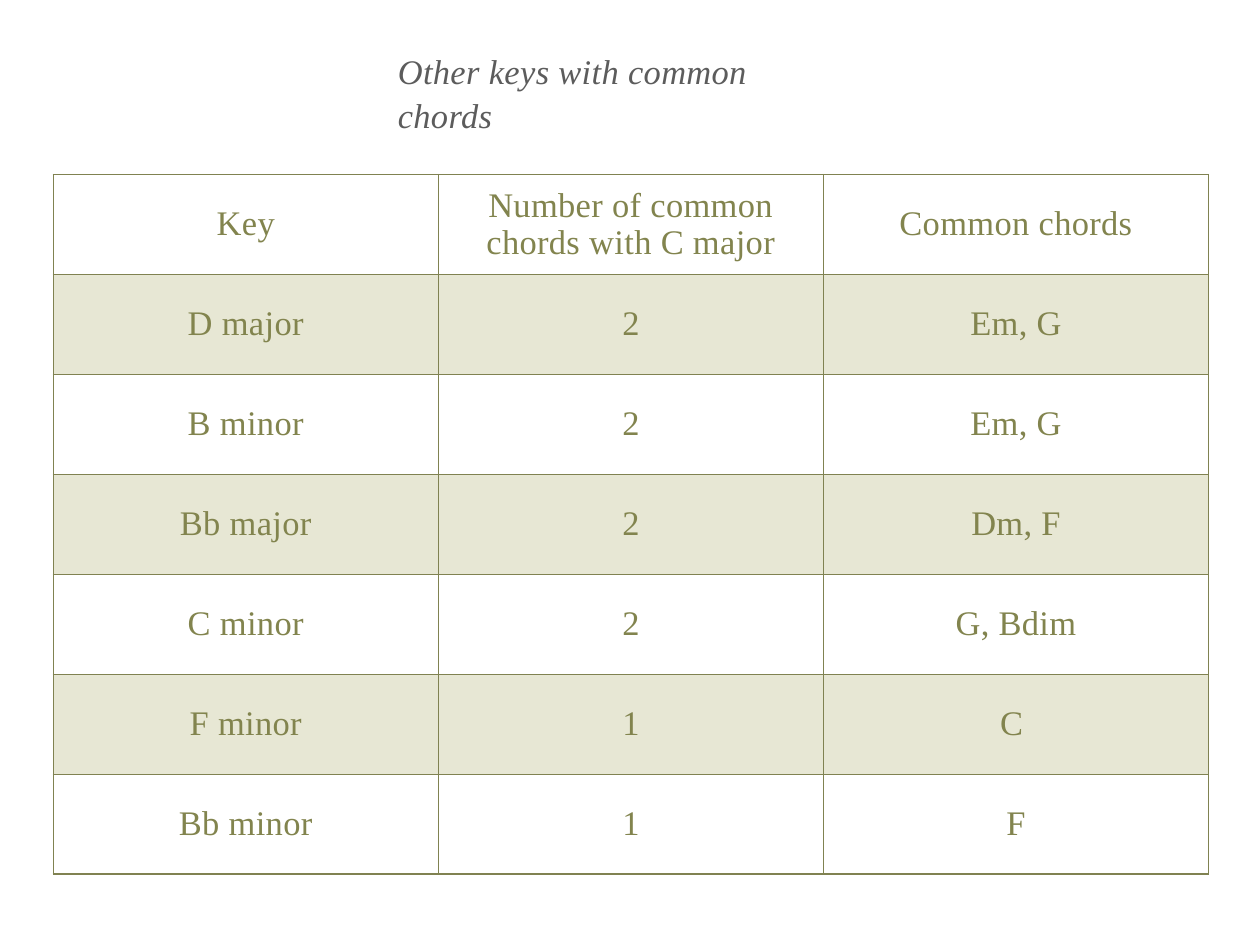
from lxml import etree
from pptx import Presentation, util as u
from pptx.dml.color import RGBColor
from pptx.enum import text
from pptx.oxml.ns import qn

FONT = "Times New Roman"
TITLE_GREY = RGBColor(0x5C, 0x5C, 0x5C)
OLIVE_TEXT = RGBColor(0x82, 0x84, 0x4E)
OLIVE_LINE = RGBColor(0x80, 0x82, 0x51)
OLIVE_BAND = RGBColor(0xA8, 0xA8, 0x61)
BAND_OPACITY = 27
INSET = u.Inches(0.06)

TITLE_BOX = (4.43, 0.71, 5.07, 0.64)
TABLE_BOX = (0.6, 1.97, 13.04, 7.9)
CHORD_ROWS = [
    ("Key", "Number of common chords with C major", "Common chords"),
    ("D major", "2", "Em, G"),
    ("B minor", "2", "Em, G"),
    ("Bb major", "2", "Dm, F"),
    ("C minor", "2", "G, Bdim"),
    ("F minor", "1", "C "),
    ("Bb minor", "1", "F"),
]


def format_paragraph(paragraph, color, alignment, line_spacing, italic=False):
    paragraph.alignment = alignment
    paragraph.line_spacing = line_spacing
    for run in paragraph.runs:
        run.font.name = FONT
        run.font.size = u.Pt(28)
        run.font.bold = False
        run.font.italic = italic
        run.font.color.rgb = color
        run.font._element.set("spc", "30")


def set_insets(holder):
    holder.margin_left = holder.margin_right = INSET
    holder.margin_top = holder.margin_bottom = INSET
    holder.vertical_anchor = text.MSO_ANCHOR.MIDDLE


def set_borders(cell):
    properties = cell._tc.get_or_add_tcPr()
    for index, side in enumerate(("lnL", "lnR", "lnT", "lnB")):
        line = etree.Element(qn(f"a:{side}"), w=str(u.Pt(1)))
        fill = etree.SubElement(line, qn("a:solidFill"))
        etree.SubElement(fill, qn("a:srgbClr"), val=str(OLIVE_LINE))
        properties.insert(index, line)  # borders come before the fill


def fill_band(cell):
    cell.fill.solid()
    cell.fill.fore_color.rgb = OLIVE_BAND
    color = cell._tc.tcPr.find(".//" + qn("a:srgbClr"))
    etree.SubElement(color, qn("a:alpha"), val=str(BAND_OPACITY * 1000))


def add_title(slide, box):
    title = slide.shapes.title
    title.left, title.top, title.width, title.height = map(u.Inches, box)
    frame = title.text_frame
    frame.text = "Other keys with common chords"
    frame.word_wrap = True
    frame.auto_size = text.MSO_AUTO_SIZE.NONE
    set_insets(frame)
    format_paragraph(frame.paragraphs[0], TITLE_GREY, text.PP_ALIGN.LEFT, 1.06, italic=True)


def add_chord_table(slide, box):
    left, top, width, height = map(u.Inches, box)
    row_count, column_count = len(CHORD_ROWS), len(CHORD_ROWS[0])
    table = slide.shapes.add_table(row_count, column_count, left, top, width, height).table
    table.first_row = table.horz_banding = False
    for column in table.columns:
        column.width = width // column_count
    for row_index, (row, labels) in enumerate(zip(table.rows, CHORD_ROWS)):
        row.height = height // row_count
        for cell, label in zip(row.cells, labels):
            cell.text = label
            set_insets(cell)
            format_paragraph(cell.text_frame.paragraphs[0], OLIVE_TEXT, text.PP_ALIGN.CENTER, 0.97)
            # Every second row is tinted
            if row_index % 2:
                fill_band(cell)
            else:
                cell.fill.background()
            set_borders(cell)


def main():
    presentation = Presentation()
    presentation.slide_width = u.Inches(14.22)
    presentation.slide_height = u.Inches(10.67)
    slide = presentation.slides.add_slide(presentation.slide_layouts.get_by_name("Title Only"))
    add_title(slide, TITLE_BOX)
    add_chord_table(slide, TABLE_BOX)
    presentation.save("out.pptx")


if __name__ == "__main__":
    main()
